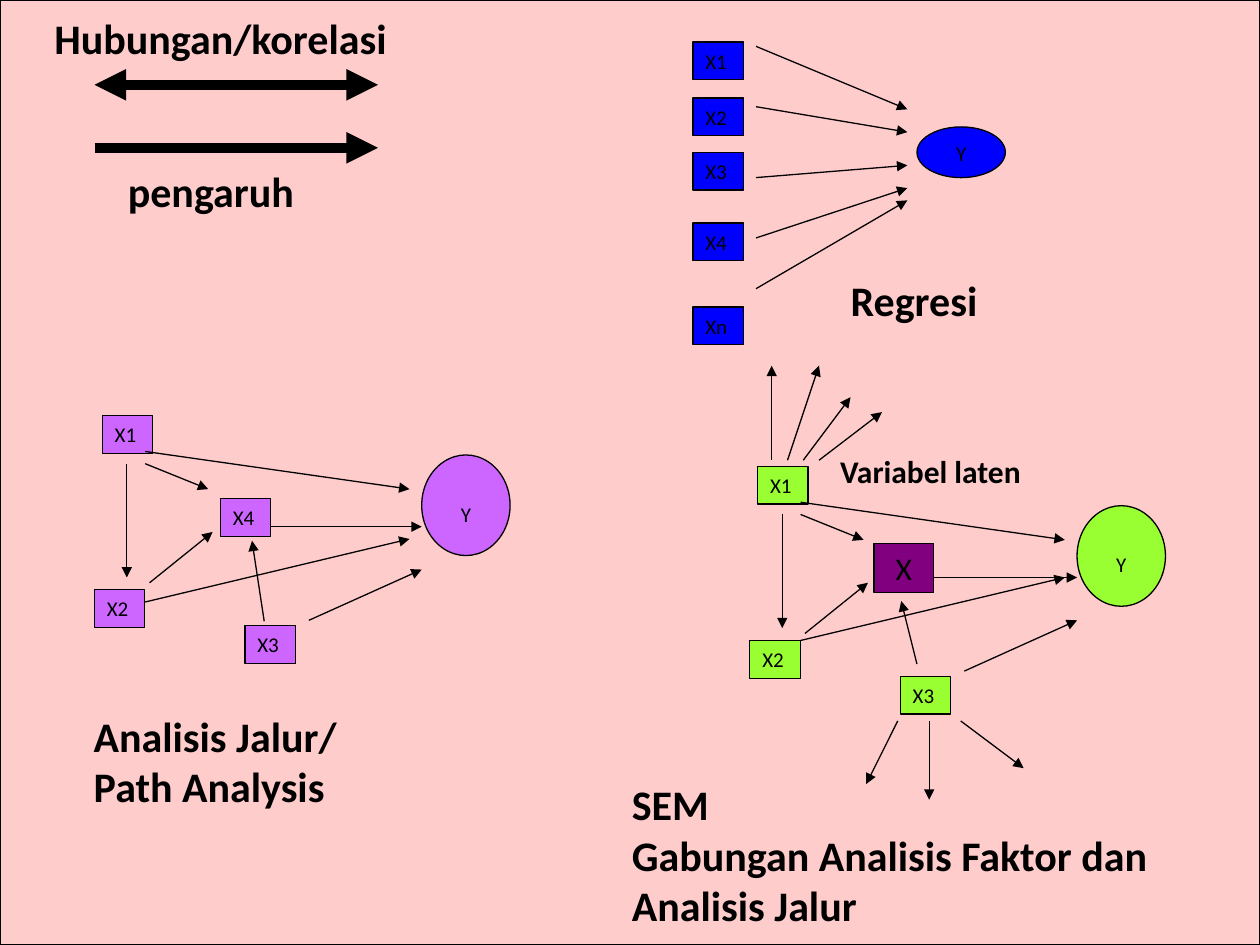
from dataclasses import dataclass

from pptx import Presentation
from pptx import util as u
from pptx.dml.color import RGBColor
from pptx.enum import shapes, text
from pptx.oxml import parse_xml
from pptx.oxml.ns import nsdecls, qn

Pt = u.Pt
RECT = shapes.MSO_SHAPE.RECTANGLE
OVAL = shapes.MSO_SHAPE.OVAL
LEFT, MID = text.PP_ALIGN.LEFT, text.PP_ALIGN.CENTER
TOP, CENTER = text.MSO_ANCHOR.TOP, text.MSO_ANCHOR.MIDDLE


@dataclass(frozen=True)
class Theme:
    font: str = "Calibri"
    ink: str = "000000"
    back: str = "FFCCCC"
    blue: str = "0000FF"
    green: str = "99FF33"
    plum: str = "800080"
    violet: str = "CC66FF"
    small: int = 12
    mid: int = 18
    large: int = 24
    thin: float = 0.75
    thick: int = 6


T = Theme()


def write(frame, words, size=T.small, bold=False, align=LEFT, anchor=TOP,
          wrap=True, top=3.6):
    frame.word_wrap = wrap
    frame.vertical_anchor = anchor
    frame.margin_top = Pt(top)
    for i, line in enumerate(words.split("\n")):
        para = frame.add_paragraph() if i else frame.paragraphs[0]
        para.alignment = align
        run = para.add_run()
        run.text = line
        run.font.name = T.font
        run.font.size = Pt(size)
        run.font.bold = bold
        run.font.color.rgb = RGBColor.from_string(T.ink)


def node(slide, kind, x, y, w, h, fill, words="", **style):
    shape = slide.shapes.add_shape(kind, Pt(x), Pt(y), Pt(w), Pt(h))
    shape.shadow.inherit = False
    shape.fill.solid()
    shape.fill.fore_color.rgb = RGBColor.from_string(fill)
    shape.line.color.rgb = RGBColor.from_string(T.ink)
    shape.line.width = Pt(T.thin)
    if words:
        write(shape.text_frame, words, **style)


def box(slide, words, x, y, fill):
    node(slide, RECT, x, y, 28.8, 21.6, fill, words)


def arrow(slide, x1, y1, x2, y2, width=T.thin, both=False):
    line = slide.shapes.add_connector(
        shapes.MSO_CONNECTOR.STRAIGHT, Pt(x1), Pt(y1), Pt(x2), Pt(y2))
    line.line.color.rgb = RGBColor.from_string(T.ink)
    line.line.width = Pt(width)
    props = line.line._get_or_add_ln()
    for end in ("headEnd", "tailEnd") if both else ("tailEnd",):
        props.append(parse_xml(f'<a:{end} {nsdecls("a")} type="triangle"/>'))
    line._element.spPr.append(line._element.spPr.makeelement(qn("a:effectLst"), {}))


def label(slide, words, x, y, w, h, size=T.large):
    area = slide.shapes.add_textbox(Pt(x), Pt(y), Pt(w), Pt(h))
    write(area.text_frame, words, size=size, bold=True, wrap=False)
    area.text_frame.auto_size = text.MSO_AUTO_SIZE.SHAPE_TO_FIT_TEXT


def legend(slide):
    arrow(slide, 54, 48.5, 216, 48.5, T.thick, both=True)
    arrow(slide, 54, 84.5, 216, 84.5, T.thick)
    label(slide, "Hubungan/korelasi", 24, 3.5, 230.5, 36)
    label(slide, "pengaruh", 66, 91, 124, 36)


def regress(slide):
    for words, y in (("X1", 24), ("X2", 56), ("X3", 87), ("X4", 127.5), ("Xn", 175.5)):
        box(slide, words, 396, y, T.blue)
    node(slide, OVAL, 524, 72.5, 50.5, 29, T.blue, "Y", align=MID)
    for y1, y2 in ((26.5, 62.5), (61, 75.5), (101.5, 94.5), (136, 107.5), (165, 114.5)):
        arrow(slide, 432, y1, 518.5, y2)
    label(slide, "Regresi", 479, 153.5, 103, 36)


def paths(slide, fill, dx=0, dy=0, lift=0):
    """Boxes X1 to X3, target Y and the arrows both path models share."""
    for words, x, y in (("X1", 58.5, 237.5), ("X2", 54, 337), ("X3", 140, 357.5)):
        box(slide, words, x + dx, y + dy, fill)
    node(slide, OVAL, 241 + dx, 260 + dy, 50.5, 57.5, fill, "Y", align=MID, top=18)
    for x1, y1, x2, y2 in (
        (83, 265, 119, 279.5),                 # X1 to the middle
        (72.5, 265, 72.5, 330),                # X1 to X2
        (85.5, 333, 121.5, 304),               # X2 to the middle
        (155, 301, 241, 301),                  # middle to Y
        (83, 344 - lift, 234, 308 - lift),     # X2 to Y
        (176.5, 354.5, 241, 325.5),            # X3 to Y
        (83, 258, 234, 279.5),                 # X1 to Y
    ):
        arrow(slide, x1 + dx, y1 + dy, x2 + dx, y2 + dy)


def jalur(slide):
    paths(slide, T.violet)
    box(slide, "X4", 126, 285, T.violet)
    arrow(slide, 151, 355, 144, 309)
    label(slide, "Analisis Jalur/\nPath Analysis", 46.5, 402.5, 177, 65)


def sem(slide):
    paths(slide, T.green, dx=374.5, dy=29, lift=7)
    node(slide, RECT, 499.5, 310.5, 34, 28, T.plum, "X", size=T.mid,
         align=MID, anchor=CENTER, wrap=False)
    arrow(slide, 524, 379.5, 515, 343.5)
    # Indicators of X1, then of X3
    for x1, x2, y2 in ((441, 441, 209), (450, 468, 209), (459, 486, 227), (468, 504, 235.5)):
        arrow(slide, x1, 263, x2, y2)
    for x1, x2, y2 in ((513, 495, 448), (531, 531, 457), (549, 585, 439)):
        arrow(slide, x1, 412, x2, y2)
    label(slide, "SEM\nGabungan Analisis Faktor dan\nAnalisis Jalur",
          354, 441.5, 361, 93.5)
    label(slide, "Variabel laten", 473, 255, 132, 29, size=T.mid)


def main():
    deck = Presentation()
    deck.slide_width, deck.slide_height = Pt(720), Pt(540)
    slide = deck.slides.add_slide(deck.slide_layouts[6])
    node(slide, RECT, 0, 0, 720, 540, T.back)
    for part in (regress, sem, jalur, legend):
        part(slide)
    deck.save("out.pptx")


if __name__ == "__main__":
    main()
